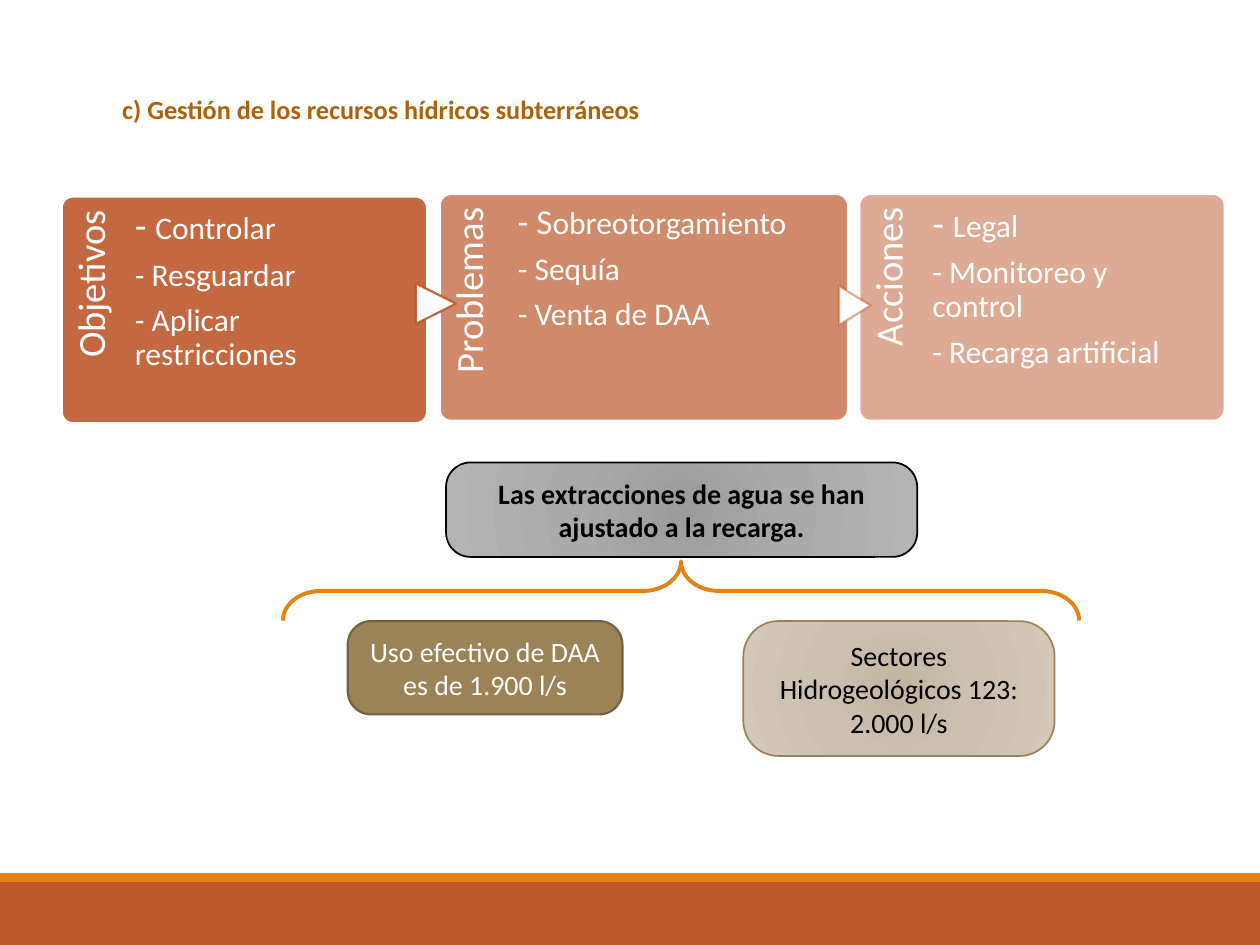
from dataclasses import dataclass

import pptx
import pptx.dml.color
import pptx.enum.shapes
import pptx.enum.text
import pptx.oxml
import pptx.oxml.ns
import pptx.util

Inches = pptx.util.Inches
Pt = pptx.util.Pt
Shape = pptx.enum.shapes.MSO_SHAPE
Align = pptx.enum.text.PP_ALIGN
Anchor = pptx.enum.text.MSO_ANCHOR


@dataclass(frozen=True)
class Theme:
    font: str = "Calibri"
    rust: str = "BD582C"
    orange: str = "E48312"
    title: str = "AB620D"
    white: str = "FFFFFF"
    black: str = "000000"
    tan: str = "9B8357"
    tan_edge: str = "736140"
    tan_glow: tuple = ("C2B5A2", "CCC1B1", "D4C8B8")
    gray_glow: tuple = ("9C9C9C", "AAAAAA", "B4B4B4")
    title_size: float = 15
    heading_size: float = 22
    list_size: float = 18
    callout_size: float = 16


@dataclass(frozen=True)
class Panel:
    heading: str
    left: float
    top: float
    width: float
    list_inset: float
    opacity: int
    lead: tuple
    items: tuple
    placeholder: int


THEME = Theme()
PANEL_HEIGHT = 1.8
HEADING_LENGTH = 1.47
PANELS = (
    Panel("Objetivos", 0.49, 1.56, 2.9, 0.58, 90, ("- ", 22),
          ("Controlar", "- Resguardar", "- Aplicar restricciones"), 1),
    Panel("Problemas", 3.49, 1.54, 3.24, 0.62, 70, ("- S", 20),
          ("obreotorgamiento", "- Sequía", "- Venta de DAA"), 2),
    Panel("Acciones", 6.82, 1.54, 2.9, 0.58, 50, ("- ", 22),
          ("Legal", "- Monitoreo y control", "- Recarga artificial"), 3),
)


def rgb(color):
    return pptx.dml.color.RGBColor.from_string(color)


def place(shape, left, top, width, height):
    shape.left, shape.top = Inches(left), Inches(top)
    shape.width, shape.height = Inches(width), Inches(height)


def add_run(paragraph, text, size, color, bold=False):
    run = paragraph.add_run()
    run.text = text
    run.font.name = THEME.font
    run.font.size = Pt(size)
    run.font.bold = bold
    run.font.color.rgb = rgb(color)


def format_frame(frame, insets, anchor=Anchor.TOP):
    frame.word_wrap = True
    frame.auto_size = pptx.enum.text.MSO_AUTO_SIZE.NONE
    frame.vertical_anchor = anchor
    (frame.margin_left, frame.margin_top,
     frame.margin_right, frame.margin_bottom) = map(Inches, insets)


def format_paragraph(paragraph):
    paragraph.line_spacing = 0.9
    paragraph.space_before = Pt(0)
    paragraph.space_after = Pt(0.35 * THEME.list_size)


def set_opacity(shape, query, percent):
    for color in shape._element.spPr.xpath(query):
        alpha = color.makeelement(pptx.oxml.ns.qn("a:alpha"), {"val": str(percent * 1000)})
        color.append(alpha)


def add_shape(slide, kind, box, fill=None, line=None, line_width=1, adjustments=()):
    shape = slide.shapes.add_shape(kind, *map(Inches, box))
    shape.shadow.inherit = False
    for index, value in enumerate(adjustments):
        shape.adjustments[index] = value
    if fill:
        shape.fill.solid()
        shape.fill.fore_color.rgb = rgb(fill)
    else:
        shape.fill.background()
    if line:
        shape.line.color.rgb = rgb(line)
        shape.line.width = Pt(line_width)
    else:
        shape.line.fill.background()
    return shape


def set_glow(shape, colors):
    stops = "".join(
        f'<a:gs pos="{position}"><a:srgbClr val="{color}"/></a:gs>'
        for position, color in zip((0, 45000, 100000), colors)
    )
    gradient = pptx.oxml.parse_xml(
        f'<a:gradFill {pptx.oxml.ns.nsdecls("a")} rotWithShape="1"><a:gsLst>{stops}</a:gsLst>'
        '<a:path path="circle"><a:fillToRect l="100000" t="100000" r="100000" b="100000"/>'
        '</a:path></a:gradFill>'
    )
    properties = shape._element.spPr
    properties.replace(properties.xpath("a:noFill")[0], gradient)


def add_title(slide, text):
    title = slide.shapes.title
    place(title, 0.9, 0.7, 7.85, 0.53)
    format_frame(title.text_frame, (0.07, 0.04, 0.07, 0.04))
    paragraph = title.text_frame.paragraphs[0]
    paragraph.alignment = Align.LEFT
    add_run(paragraph, text, THEME.title_size, THEME.title, bold=True)


def add_heading(slide, panel):
    band = panel.width / 5
    left = panel.left + (band - HEADING_LENGTH) / 2
    top = panel.top + (HEADING_LENGTH - band) / 2
    heading = slide.shapes.add_textbox(*map(Inches, (left, top, HEADING_LENGTH, band)))
    heading.rotation = 270
    format_frame(heading.text_frame, (0, 0.08, 0.11, 0))
    paragraph = heading.text_frame.paragraphs[0]
    paragraph.alignment = Align.RIGHT
    format_paragraph(paragraph)
    add_run(paragraph, panel.heading, THEME.heading_size, THEME.white)


def fill_list(slide, panel):
    body = slide.placeholders[panel.placeholder]
    slide.shapes._spTree.append(body._element)
    place(body, panel.left + panel.list_inset, panel.top, 0.745 * panel.width, PANEL_HEIGHT)
    frame = body.text_frame
    format_frame(frame, (0, 0.08, 0, 0))
    for index, item in enumerate(panel.items):
        paragraph = frame.add_paragraph() if index else frame.paragraphs[0]
        format_paragraph(paragraph)
        properties = paragraph._p.get_or_add_pPr()
        properties.set("marL", "0")
        properties.set("indent", "0")
        properties.append(properties.makeelement(pptx.oxml.ns.qn("a:buNone"), {}))
        if index == 0:
            add_run(paragraph, *panel.lead, THEME.white)
        add_run(paragraph, item, THEME.list_size, THEME.white)


def add_panel(slide, panel):
    card = add_shape(slide, Shape.ROUNDED_RECTANGLE,
                     (panel.left, panel.top, panel.width, PANEL_HEIGHT),
                     THEME.rust, THEME.white, 1.25, (0.05,))
    set_opacity(card, "a:solidFill/a:srgbClr", panel.opacity)
    add_heading(slide, panel)
    fill_list(slide, panel)


def add_pointer(slide, box, opacity):
    pointer = add_shape(slide, Shape.FLOWCHART_EXTRACT, box, THEME.white, THEME.rust, 1.25)
    pointer.rotation = 90
    set_opacity(pointer, "a:ln/a:solidFill/a:srgbClr", opacity)


def add_callout(slide, text, box, line, color, corner, fill=None, glow=None,
                line_width=1, bold=False):
    callout = add_shape(slide, Shape.ROUNDED_RECTANGLE, box, fill, line, line_width, (corner,))
    if glow:
        set_glow(callout, glow)
    format_frame(callout.text_frame, (0.1, 0.05, 0.1, 0.05), Anchor.MIDDLE)
    paragraph = callout.text_frame.paragraphs[0]
    paragraph.alignment = Align.CENTER
    add_run(paragraph, text, THEME.callout_size, color, bold)


def main():
    presentation = pptx.Presentation()
    presentation.slide_width, presentation.slide_height = Inches(10), Inches(7.5)
    slide = presentation.slides.add_slide(presentation.slide_layouts.get_by_name("Comparison"))
    spare = slide.placeholders[4]._element
    spare.getparent().remove(spare)

    add_shape(slide, Shape.RECTANGLE, (0, 7, 10, 0.5), THEME.rust)
    add_shape(slide, Shape.RECTANGLE, (0, 6.93, 10, 0.07), THEME.orange)
    add_title(slide, "c) Gestión de los recursos hídricos subterráneos")
    for panel in PANELS:
        add_panel(slide, panel)
    add_pointer(slide, (3.3, 2.25, 0.32, 0.32), 90)
    add_pointer(slide, (6.63, 2.3, 0.31, 0.25), 50)

    add_callout(slide, "Sectores Hidrogeológicos 123: 2.000 l/s", (5.9, 4.93, 2.47, 1.07),
                THEME.tan, THEME.black, 0.26, glow=THEME.tan_glow)
    add_callout(slide, "Uso efectivo de DAA es de 1.900 l/s", (2.76, 4.93, 2.18, 0.74),
                THEME.tan_edge, THEME.white, 0.25, fill=THEME.tan, line_width=1.25)
    add_callout(slide, "Las extracciones de agua se han ajustado a la recarga.",
                (3.54, 3.67, 3.74, 0.75), THEME.black, THEME.black, 0.26,
                glow=THEME.gray_glow, bold=True)
    brace = add_shape(slide, Shape.RIGHT_BRACE, (5.17, 1.53, 0.47, 6.32),
                      line=THEME.orange, line_width=2.25, adjustments=(0.64, 0.5))
    brace.rotation = 270
    presentation.save("out.pptx")


if __name__ == "__main__":
    main()
